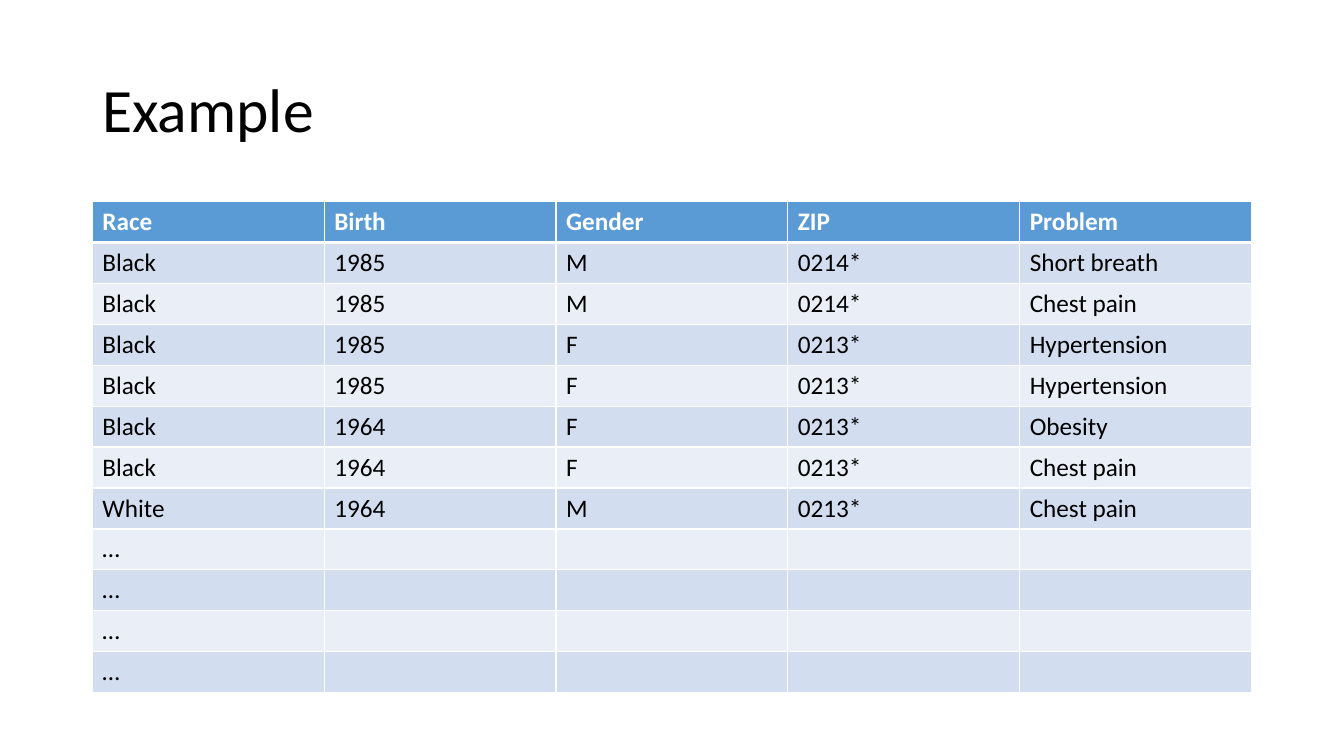
import pptx
import pptx.dml.color
import pptx.enum.text
import pptx.oxml
import pptx.oxml.ns
import pptx.util

PX = 9525
FONT = "Calibri"
COLORS = {
    "text": "000000",
    "white": "FFFFFF",
    "header": "5B9BD5",
    "band_dark": "D2DEEF",
    "band_light": "EAEFF7",
}
HEADINGS = ["Race", "Birth", "Gender", "ZIP", "Problem"]
PATIENTS = [
    ["Black", "1985", "M", "0214*", "Short breath"],
    ["Black", "1985", "M", "0214*", "Chest pain"],
    ["Black", "1985", "F", "0213*", "Hypertension"],
    ["Black", "1985", "F", "0213*", "Hypertension"],
    ["Black", "1964", "F", "0213*", "Obesity"],
    ["Black", "1964", "F", "0213*", "Chest pain"],
    ["White", "1964", "M", "0213*", "Chest pain"],
]
MORE_ROWS = [["…", "", "", "", ""]] * 4


def px(length):
    return pptx.util.Emu(length * PX)


def color(name):
    return pptx.dml.color.RGBColor.from_string(COLORS[name])


def add_run(para, text, size, color_name, bold=False):
    span = para.add_run()
    span.text = text
    span.font.name = FONT
    span.font.size = pptx.util.Pt(size)
    span.font.bold = bold
    span.font.color.rgb = color(color_name)


def add_borders(cell, top, bottom):
    properties = cell._tc.get_or_add_tcPr()
    for side, points in (("L", 1), ("R", 1), ("T", top), ("B", bottom)):
        properties.append(pptx.oxml.parse_xml(
            f'<a:ln{side} {pptx.oxml.ns.nsdecls("a")} w="{pptx.util.Pt(points)}">'
            f'<a:solidFill><a:srgbClr val="{COLORS["white"]}"/></a:solidFill>'
            f'</a:ln{side}>'))


def add_title(page, text, left, top, width, height):
    box = page.shapes.add_textbox(px(left), px(top), px(width), px(height))
    frame = box.text_frame
    frame.word_wrap = True
    frame.vertical_anchor = pptx.enum.text.MSO_ANCHOR.MIDDLE
    para = frame.paragraphs[0]
    para.line_spacing = 0.9
    add_run(para, text, 44, "text")


def add_patient_table(page, rows, left, top, width, height):
    table = page.shapes.add_table(
        len(rows), len(rows[0]), px(left), px(top), px(width), px(height)).table
    for row_index, values in enumerate(rows):
        is_header = row_index == 0
        if is_header:
            fill_name = "header"
        else:
            fill_name = "band_dark" if row_index % 2 else "band_light"
        for column_index, value in enumerate(values):
            cell = table.cell(row_index, column_index)
            add_borders(cell, 3 if row_index == 1 else 1, 3 if is_header else 1)
            cell.fill.solid()
            cell.fill.fore_color.rgb = color(fill_name)
            if value:
                add_run(cell.text_frame.paragraphs[0], value, 18,
                        "white" if is_header else "text", is_header)


def main():
    deck = pptx.Presentation()
    deck.slide_width = px(1280)
    deck.slide_height = px(720)
    page = deck.slides.add_slide(deck.slide_layouts[6])
    add_title(page, "Example", 88, 38, 1104, 139)
    add_patient_table(page, [HEADINGS] + PATIENTS + MORE_ROWS, 88, 192, 1104, 468)
    deck.save("out.pptx")


if __name__ == "__main__":
    main()
